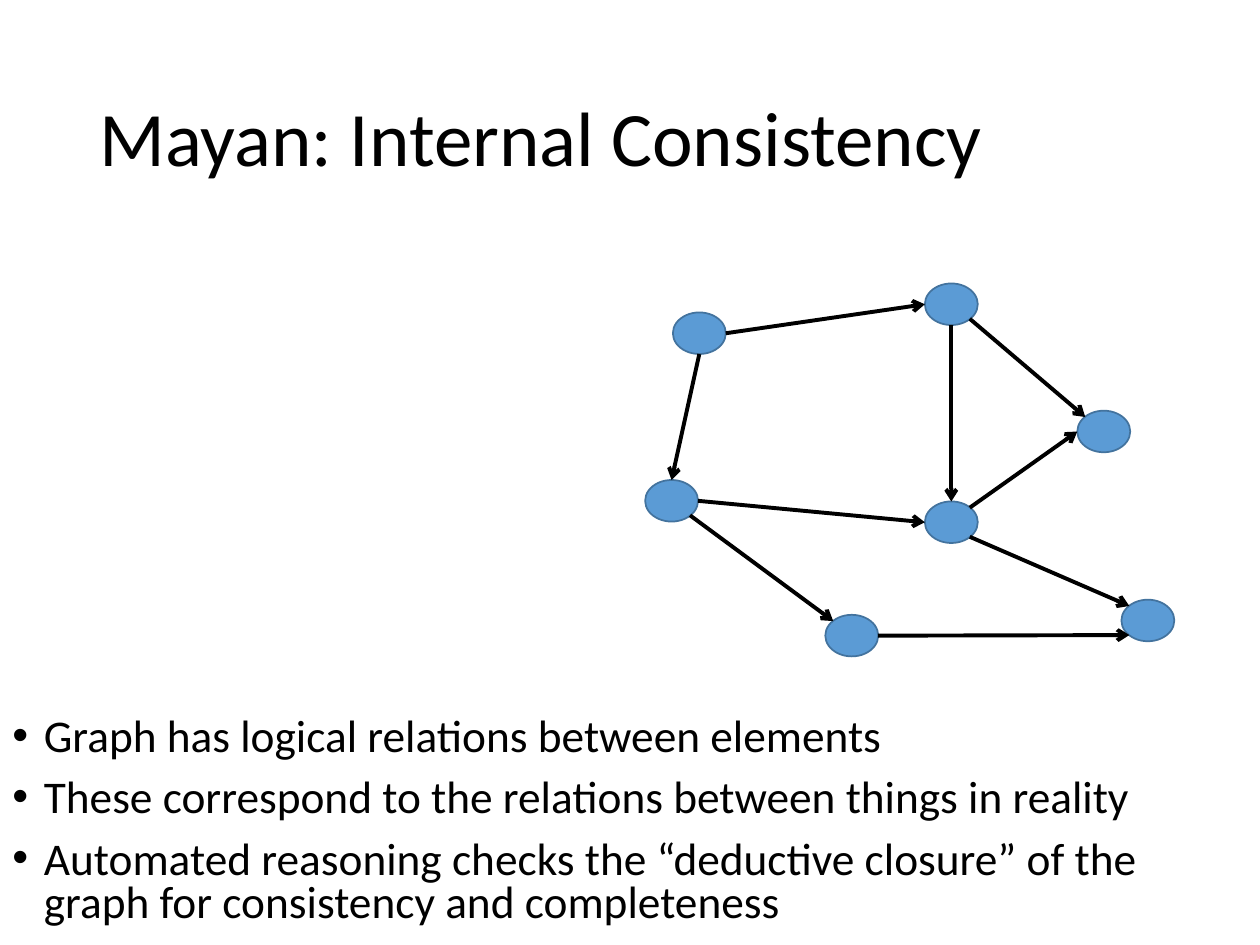
from lxml import etree
from pptx import Presentation
from pptx import util as u
from pptx.dml.color import RGBColor
from pptx.enum import shapes, text
from pptx.oxml import ns

Inches = u.Inches
THEME = {
    "font": "Calibri",
    "ink": RGBColor.from_string("000000"),
    "node": RGBColor.from_string("5B9BD5"),
    "node_line": RGBColor.from_string("43739E"),
    "title_size": u.Pt(44),
    "body_size": u.Pt(25.9),
    "node_width": u.Pt(1),
    "edge_width": u.Pt(2.25),
}


def add_text(para, words, size, spacing):
    para.alignment = text.PP_ALIGN.LEFT
    para.line_spacing = spacing
    span = para.add_run()
    span.text = words
    for name, value in {"name": THEME["font"], "size": size}.items():
        setattr(span.font, name, value)
    span.font.color.rgb = THEME["ink"]


deck = Presentation()
deck.slide_width, deck.slide_height = Inches(10), Inches(7.5)
page = deck.slides.add_slide(deck.slide_layouts[5])

# Title
title = page.shapes.title
title_place = {"left": 0.69, "top": 0.4, "width": 8.62, "height": 1.45}
for name, value in title_place.items():
    setattr(title, name, Inches(value))
title.text_frame.auto_size = text.MSO_AUTO_SIZE.NONE
title.text_frame.vertical_anchor = text.MSO_ANCHOR.MIDDLE
add_text(title.text_frame.paragraphs[0], "Mayan: Internal Consistency",
         THEME["title_size"], 0.9)

# Graph nodes: left and top of equal ellipses
NODE_W, NODE_H = 0.42, 0.33
nodes = {
    "west": (5.12, 3.81),
    "southeast": (8.9, 4.76),
    "east": (8.55, 3.26),
    "south": (6.55, 4.88),
    "northwest": (5.34, 2.48),
    "center": (7.34, 3.98),
    "north": (7.34, 2.25),
}
for left, top in nodes.values():
    node = page.shapes.add_shape(shapes.MSO_SHAPE.OVAL, Inches(left), Inches(top),
                                 Inches(NODE_W), Inches(NODE_H))
    node.shadow.inherit = False
    node.fill.solid()
    node.fill.fore_color.rgb = THEME["node"]
    node.line.color.rgb = THEME["node_line"]
    node.line.width = THEME["node_width"]

# Graph edges: each joins a site on one ellipse to a site on another,
# with sites given as fractions of the ellipse's width and height
NEAR, FAR = 0.15, 0.85
sites = {
    "top": (0.5, 0), "bottom": (0.5, 1), "left": (0, 0.5), "right": (1, 0.5),
    "top left": (NEAR, NEAR), "top right": (FAR, NEAR),
    "bottom left": (NEAR, FAR), "bottom right": (FAR, FAR),
}
edges = [
    ("west", "bottom right", "south", "top left"),
    ("center", "bottom right", "southeast", "top left"),
    ("south", "right", "southeast", "bottom left"),
    ("west", "right", "center", "left"),
    ("northwest", "right", "north", "left"),
    ("center", "top right", "east", "left"),
    ("northwest", "bottom", "west", "top"),
    ("north", "bottom right", "east", "top left"),
    ("north", "bottom", "center", "top"),
]
for start, start_site, end, end_site in edges:
    points = []
    for name, site in ((start, start_site), (end, end_site)):
        (left, top), (across, down) = nodes[name], sites[site]
        points += [Inches(left + across * NODE_W), Inches(top + down * NODE_H)]
    edge = page.shapes.add_connector(shapes.MSO_CONNECTOR.STRAIGHT, *points)
    edge.line.color.rgb = THEME["ink"]
    edge.line.width = THEME["edge_width"]
    etree.SubElement(edge.line._get_or_add_ln(), ns.qn("a:tailEnd"), type="arrow")
    etree.SubElement(edge._element.spPr, ns.qn("a:effectLst"))

# Bulleted points
points = [
    "Graph has logical relations between elements",
    "These correspond to the relations between things in reality",
    "Automated reasoning checks the “deductive closure” of the graph "
    "for consistency and completeness",
]
box = page.shapes.add_textbox(Inches(0), Inches(5.65), Inches(10), Inches(1.81))
frame = box.text_frame
frame.word_wrap = True
for index, words in enumerate(points):
    para = frame.add_paragraph() if index else frame.paragraphs[0]
    add_text(para, words, THEME["body_size"], 0.8)
    para.space_before = u.Pt(10)
    props = para._p.get_or_add_pPr()
    props.set("marL", str(Inches(0.25)))
    props.set("indent", str(Inches(-0.25)))
    etree.SubElement(props, ns.qn("a:buFont"), typeface="Arial")
    etree.SubElement(props, ns.qn("a:buChar"), char="•")

deck.save("out.pptx")
